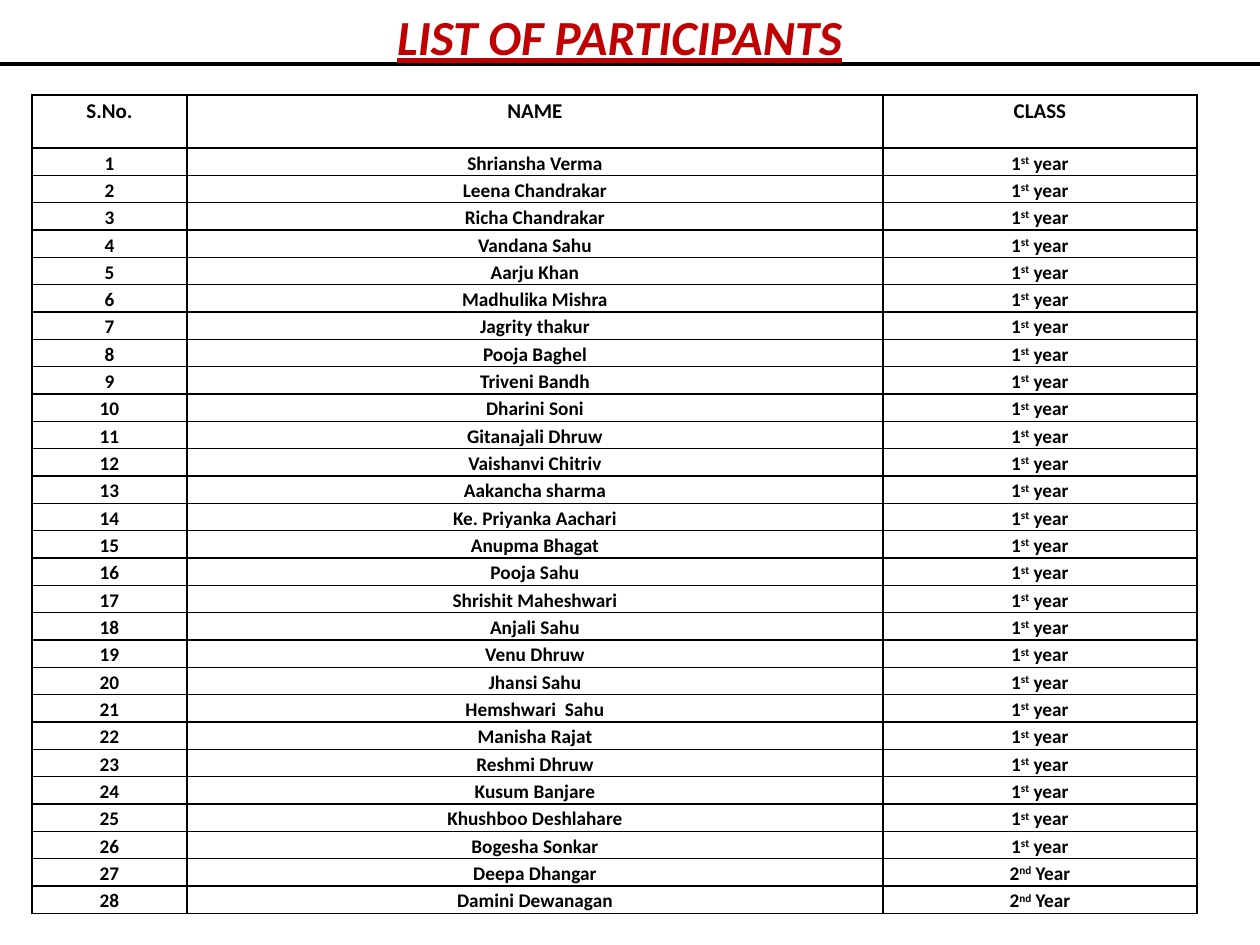
from lxml import etree
from pptx import Presentation
from pptx import util as u
from pptx.dml.color import RGBColor
from pptx.enum import shapes, text
from pptx.oxml.ns import qn

EMU_PER_PX = 914400 / 126
FONT = "Calibri"
BLACK, RED = "000000", "C00000"

HEADINGS = ["S.No.", "NAME", "CLASS"]
COLUMN_WIDTHS = [155, 696, 314]
HEADER_HEIGHT, ROW_HEIGHT = 53, 25
FIRST_YEAR = [("1", False), ("st", True), (" year", False)]
SECOND_YEAR = [("2", False), ("nd", True), (" Year", False)]
FIRST_YEAR_NAMES = [
    "Shriansha Verma", "Leena Chandrakar", "Richa Chandrakar", "Vandana Sahu",
    "Aarju Khan", "Madhulika Mishra", "Jagrity thakur", "Pooja Baghel",
    "Triveni Bandh", "Dharini Soni", "Gitanajali Dhruw", "Vaishanvi Chitriv",
    "Aakancha sharma", "Ke. Priyanka Aachari", "Anupma Bhagat", "Pooja Sahu",
    "Shrishit Maheshwari", "Anjali Sahu", "Venu Dhruw", "Jhansi Sahu",
    "Hemshwari  Sahu", "Manisha Rajat", "Reshmi Dhruw", "Kusum Banjare",
    "Khushboo Deshlahare", "Bogesha Sonkar",
]
SECOND_YEAR_NAMES = ["Deepa Dhangar", "Damini Dewanagan"]


def px(length):
    return u.Emu(round(length * EMU_PER_PX))


def color(value):
    return RGBColor.from_string(value)


def style_paragraph(paragraph, size, hex_color):
    paragraph.alignment = text.PP_ALIGN.CENTER
    font = paragraph.font
    font.name, font.size, font.bold = FONT, u.Pt(size), True
    font.color.rgb = color(hex_color)


def add_borders(cell):
    properties = cell._tc.get_or_add_tcPr()
    for side in ("lnL", "lnR", "lnT", "lnB"):
        line = etree.SubElement(properties, qn(f"a:{side}"), w=str(u.Pt(1)))
        fill = etree.SubElement(line, qn("a:solidFill"))
        etree.SubElement(fill, qn("a:srgbClr"), val=BLACK)


def fill_cell(cell, pieces, size):
    """Write (words, is_superscript) pieces into a bordered cell."""
    cell.margin_left = cell.margin_right = px(5)
    cell.margin_top = cell.margin_bottom = 0
    add_borders(cell)
    cell.fill.background()
    paragraph = cell.text_frame.paragraphs[0]
    paragraph.line_spacing = 1.15
    style_paragraph(paragraph, size, BLACK)
    for words, is_superscript in pieces:
        run = paragraph.add_run()
        run.text = words
        if is_superscript:
            run._r.get_or_add_rPr().set("baseline", "30000")


def add_participants(slide, left, top):
    participants = [(name, FIRST_YEAR) for name in FIRST_YEAR_NAMES]
    participants += [(name, SECOND_YEAR) for name in SECOND_YEAR_NAMES]
    rows = [[[(heading, False)] for heading in HEADINGS]]
    for number, (name, year) in enumerate(participants, 1):
        rows.append([[(str(number), False)], [(name, False)], year])

    height = HEADER_HEIGHT + ROW_HEIGHT * len(participants)
    table = slide.shapes.add_table(
        len(rows), len(HEADINGS), px(left), px(top),
        px(sum(COLUMN_WIDTHS)), px(height)).table
    table.first_row = table.horz_banding = False
    for column, width in zip(table.columns, COLUMN_WIDTHS):
        column.width = px(width)
    for index, row in enumerate(rows):
        is_header = index == 0
        table.rows[index].height = px(HEADER_HEIGHT if is_header else ROW_HEIGHT)
        for cell, pieces in zip(table.rows[index].cells, row):
            fill_cell(cell, pieces, 12 if is_header else 11)


def add_rule(slide, left, top, width, height):
    shape = slide.shapes.add_shape(
        shapes.MSO_SHAPE.RECTANGLE, px(left), px(top), px(width), px(height))
    shape.shadow.inherit = False
    shape.fill.solid()
    shape.fill.fore_color.rgb = color(BLACK)
    shape.line.color.rgb = color(BLACK)
    shape.line.width = u.Pt(0.75)


def add_title(slide, words, left, top, width, height):
    box = slide.shapes.add_textbox(px(left), px(top), px(width), px(height))
    frame = box.text_frame
    frame.word_wrap = True
    frame.vertical_anchor = text.MSO_ANCHOR.MIDDLE
    paragraph = frame.paragraphs[0]
    paragraph.text = words
    style_paragraph(paragraph, 28, RED)
    paragraph.font.italic = paragraph.font.underline = True


def main():
    presentation = Presentation()
    presentation.slide_width, presentation.slide_height = px(1260), px(945)
    slide = presentation.slides.add_slide(presentation.slide_layouts[6])

    # Participant list
    add_participants(slide, 32, 95)

    # Heading with the rule behind it
    add_rule(slide, 0, 63, 1260, 2)
    add_title(slide, "LIST OF PARTICIPANTS", 0, 0, 1239, 72)

    presentation.save("out.pptx")


if __name__ == "__main__":
    main()
